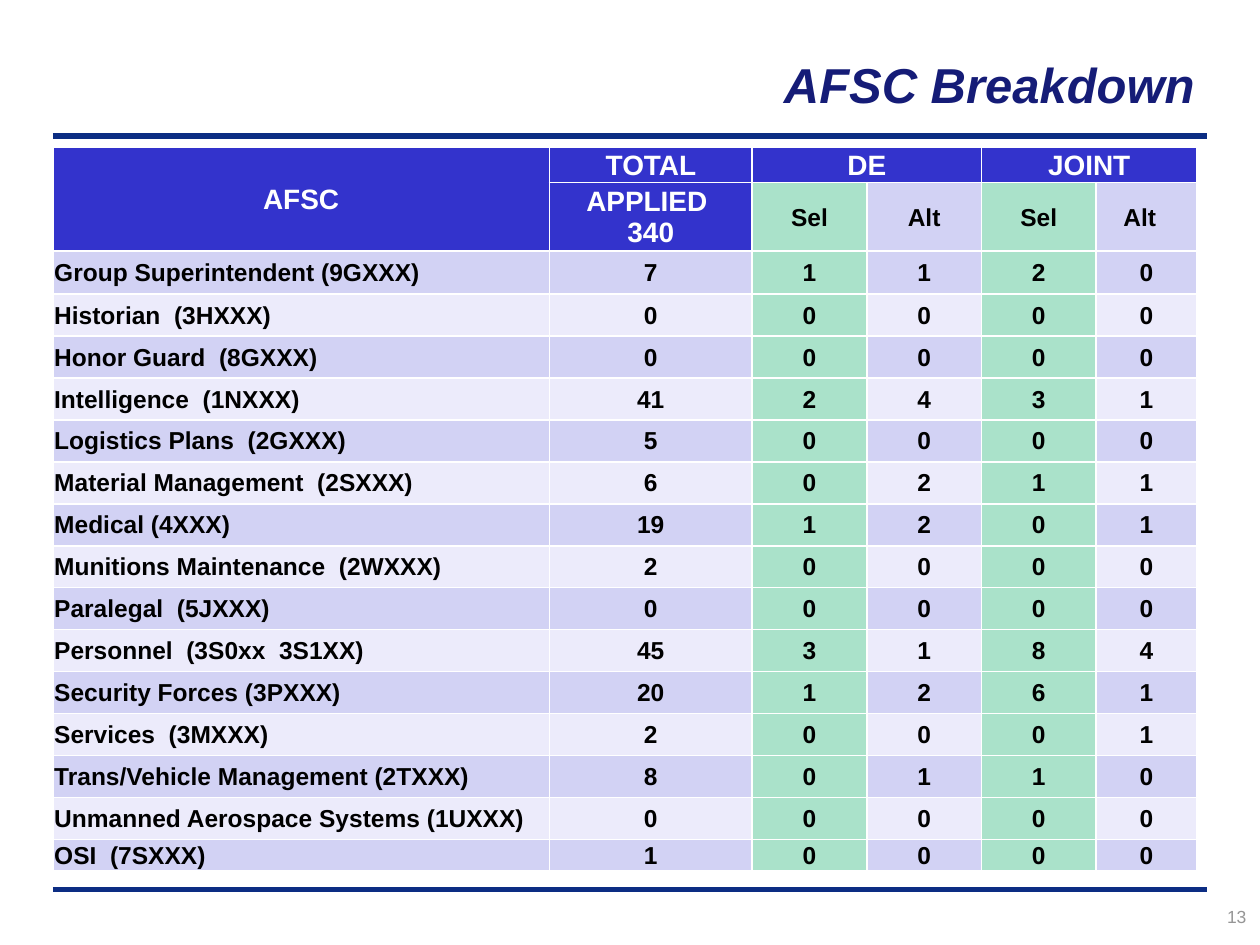
import pptx
import pptx.dml.color
import pptx.enum.shapes
import pptx.enum.text
import pptx.oxml
import pptx.oxml.ns
import pptx.util
import lxml.etree

Inches = pptx.util.Inches
Align = pptx.enum.text.PP_ALIGN
Anchor = pptx.enum.text.MSO_ANCHOR


def color(value):
    return pptx.dml.color.RGBColor.from_string(value)


def write(frame, text, alignment, size, text_color, **styles):
    frame.text = text
    for paragraph in frame.paragraphs:
        paragraph.alignment = alignment
        formats = {"name": "Arial", "size": pptx.util.Pt(size), **styles}
        for name, value in formats.items():
            setattr(paragraph.font, name, value)
        paragraph.font.color.rgb = color(text_color)


presentation = pptx.Presentation()
presentation.slide_width = Inches(10)
presentation.slide_height = Inches(7.5)
slide = presentation.slides.add_slide(presentation.slide_layouts[5])

for y in (7.06, 1.08):
    rule = slide.shapes.add_connector(
        pptx.enum.shapes.MSO_CONNECTOR.STRAIGHT,
        Inches(0.42), Inches(y), Inches(9.58), Inches(y))
    rule.line.color.rgb = color("0C2D83")
    rule.line.width = pptx.util.Pt(3)
    lxml.etree.SubElement(rule._element.spPr, pptx.oxml.ns.qn("a:effectLst"))

title = slide.shapes.title
title_box = {"left": 1.58, "top": 0.33, "width": 8, "height": 0.5}
for name, value in title_box.items():
    setattr(title, name, Inches(value))
title_frame = title.text_frame
title_format = {
    "vertical_anchor": Anchor.TOP,
    "auto_size": pptx.enum.text.MSO_AUTO_SIZE.NONE,
    "margin_top": Inches(0.1),
    "margin_bottom": 0,
}
for name, value in title_format.items():
    setattr(title_frame, name, value)
write(title_frame, "AFSC Breakdown", Align.RIGHT, 28, "151C77", bold=True, italic=True)

page_number = slide.shapes.add_textbox(Inches(8.74), Inches(7.14), Inches(1.25), Inches(0.33))
page_number.text_frame.word_wrap = True
write(page_number.text_frame, "13", Align.RIGHT, 10, "969696")

rows = [
    ("AFSC", " TOTAL ", "DE", "", "JOINT", ""),
    ("", "APPLIED \n340", "Sel", "Alt", "Sel", "Alt  "),
    ("Group Superintendent (9GXXX)", 7, 1, 1, 2, 0),
    ("Historian  (3HXXX)", 0, 0, 0, 0, 0),
    ("Honor Guard  (8GXXX)", 0, 0, 0, 0, 0),
    ("Intelligence  (1NXXX)", 41, 2, 4, 3, 1),
    ("Logistics Plans  (2GXXX)", 5, 0, 0, 0, 0),
    ("Material Management  (2SXXX)", 6, 0, 2, 1, 1),
    ("Medical (4XXX)", 19, 1, 2, 0, 1),
    ("Munitions Maintenance  (2WXXX)", 2, 0, 0, 0, 0),
    ("Paralegal  (5JXXX)", 0, 0, 0, 0, 0),
    ("Personnel  (3S0xx  3S1XX)", 45, 3, 1, 8, 4),
    ("Security Forces (3PXXX)", 20, 1, 2, 6, 1),
    ("Services  (3MXXX)", 2, 0, 0, 0, 1),
    ("Trans/Vehicle Management (2TXXX)", 8, 0, 1, 1, 0),
    ("Unmanned Aerospace Systems (1UXXX)", 0, 0, 0, 0, 0),
    ("OSI  (7SXXX)", 1, 0, 0, 0, 0),
]
column_widths = [3.94, 1.61, 0.91, 0.91, 0.91, 0.8]
row_heights = [0.28, 0.54, 0.34] + [1 / 3] * 13 + [0.25]

table = slide.shapes.add_table(
    len(rows), len(column_widths),
    Inches(0.42), Inches(1.17), Inches(9.08), Inches(5.75)).table
table.first_row = False
table.horz_banding = False
for column, width in zip(table.columns, column_widths):
    column.width = Inches(width)
for row, height in zip(table.rows, row_heights):
    row.height = Inches(height)

cell_format = {
    "vertical_anchor": Anchor.MIDDLE,
    "margin_left": Inches(0.01),
    "margin_right": Inches(0.01),
    "margin_top": Inches(0.01),
    "margin_bottom": 0,
}
for row_index, values in enumerate(rows):
    for column_index, value in enumerate(values):
        cell = table.cell(row_index, column_index)
        is_header = row_index == 0 or (row_index == 1 and column_index < 2)
        if is_header:
            fill = "3333CC"
        elif column_index in (2, 4):
            fill = "AAE2CA"
        else:
            fill = "ECEBFB" if row_index > 1 and row_index % 2 else "D2D2F4"

        for name, setting in cell_format.items():
            setattr(cell, name, setting)
        properties = cell._tc.get_or_add_tcPr()
        for side in ("lnL", "lnR", "lnT", "lnB"):
            properties.append(pptx.oxml.parse_xml(
                f'<a:{side} {pptx.oxml.ns.nsdecls("a")} w="12700"><a:solidFill>'
                f'<a:srgbClr val="FFFFFF"/></a:solidFill></a:{side}>'))
        cell.fill.solid()
        cell.fill.fore_color.rgb = color(fill)

        is_label = column_index == 0 and not is_header
        write(cell.text_frame, str(value),
              Align.LEFT if is_label else Align.CENTER,
              16 if is_header else 14,
              "FFFFFF" if is_header else "000000", bold=True)

table.cell(0, 0).merge(table.cell(1, 0))
for column_index in (2, 4):
    table.cell(0, column_index).merge(table.cell(0, column_index + 1))

presentation.save("out.pptx")
